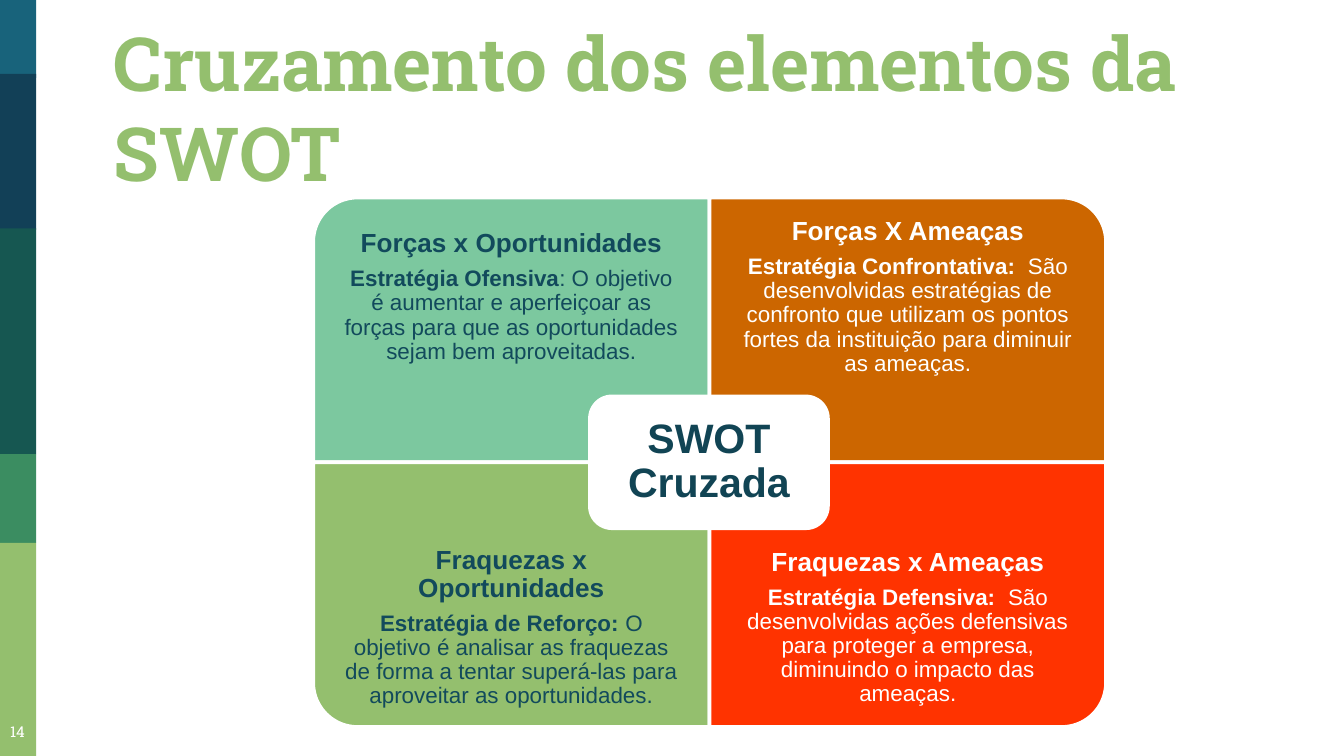
from math import cos, pi, sin

from pptx import Presentation
from pptx.dml.color import RGBColor
from pptx.enum.shapes import MSO_SHAPE as Shape
from pptx.enum.text import MSO_ANCHOR as Anchor, PP_ALIGN as Align
from pptx.util import Inches, Pt

WHITE, GREEN, NAVY = "FFFFFF", "94BF6E", "124A5C"


def color(value):
    return RGBColor.from_string(value)


class SlideBuilder:
    heading_font = "Roboto Slab"
    body_font = "Arial"

    def __init__(self, page):
        self.page = page

    def paint(self, shape, fill, line=None):
        shape.shadow.inherit = False
        shape.fill.solid()
        shape.fill.fore_color.rgb = color(fill)
        if line:
            shape.line.color.rgb = color(line)
            shape.line.width = Pt(2)
        else:
            shape.line.fill.background()
        return shape

    def block(self, kind, left, top, width, height, fill, line=None):
        shape = self.page.shapes.add_shape(
            kind, Inches(left), Inches(top), Inches(width), Inches(height))
        return self.paint(shape, fill, line)

    def frame(self, shape, anchor, left, top, right, bottom):
        frame = shape.text_frame
        frame.word_wrap = True
        frame.vertical_anchor = anchor
        frame.margin_left, frame.margin_top = Inches(left), Inches(top)
        frame.margin_right, frame.margin_bottom = Inches(right), Inches(bottom)
        return frame

    def style(self, span, size, font, ink, bold):
        span.font.size = Pt(size)
        span.font.name = font
        span.font.color.rgb = color(ink)
        span.font.bold = bold

    def label(self, text, left, top, width, height, size, ink, bold, align, anchor):
        box = self.page.shapes.add_textbox(
            Inches(left), Inches(top), Inches(width), Inches(height))
        para = self.frame(box, anchor, 0.1, 0.1, 0.1, 0.1).paragraphs[0]
        para.text = text
        para.alignment = align
        self.style(para.runs[0], size, self.heading_font, ink, bold)

    def body(self, para, size, ink, *parts):
        """Centred paragraph whose first part is bold."""
        para.alignment = Align.CENTER
        para.line_spacing = 0.9
        para.space_after = Pt(0.35 * size)
        for index, text in enumerate(parts):
            span = para.add_run()
            span.text = text
            self.style(span, size, self.body_font, ink, index == 0)

    def quadrant(self, center, side, fill, ink, heading, strategy, detail):
        """Rectangle growing from the centre with its outer corner rounded."""
        width, height, radius = 2.95, 1.97, 0.33
        (x, y), (right, down) = center, side
        outer_x, outer_y = x + right * width, y + down * height
        steps = 24
        arc = [(outer_x - right * radius * (1 - sin(angle)),
                outer_y - down * radius * (1 - cos(angle)))
               for angle in (pi / 2 * step / steps for step in range(steps + 1))]
        points = [(x, outer_y), *arc, (outer_x, y)]
        builder = self.page.shapes.build_freeform(Inches(x), Inches(y))
        builder.add_line_segments([(Inches(a), Inches(b)) for a, b in points])
        shape = self.paint(builder.convert_to_shape(), fill, WHITE)
        top, bottom = (0.22, 0.71) if down < 0 else (0.71, 0.22)
        frame = self.frame(shape, Anchor.MIDDLE, 0.22, top, 0.22, bottom)
        self.body(frame.paragraphs[0], 14, ink, heading)
        self.body(frame.add_paragraph(), 12, ink, strategy, detail)


def main():
    deck = Presentation()
    deck.slide_width = Inches(10)
    deck.slide_height = deck.slide_width * 9 // 16
    slide = SlideBuilder(deck.slides.add_slide(deck.slide_layouts[6]))

    # Side strip
    for top, height, fill in [(0, 0.58, "18637B"), (0.55, 1.16, "124057"),
                              (1.7, 1.68, "165751"), (3.38, 0.66, "3B8D61"),
                              (4.04, 1.59, GREEN)]:
        slide.block(Shape.RECTANGLE, 0, top, 0.27, height, fill)

    # Page number and title
    slide.label("14", -0.06, 5.27, 0.38, 0.35, 8, WHITE, False,
                Align.CENTER, Anchor.MIDDLE)
    slide.label("Cruzamento dos elementos da SWOT", 0.75, 0.29, 8.74, 1.27,
                40, GREEN, True, Align.LEFT, Anchor.BOTTOM)

    # Four crossed strategies
    quadrants = [
        ((-1, -1), "7CC89F", NAVY, "Forças x Oportunidades", "Estratégia Ofensiva",
         ": O objetivo é aumentar e aperfeiçoar as forças para que as "
         "oportunidades sejam bem aproveitadas."),
        ((1, -1), "CC6600", WHITE, "Forças X Ameaças", "Estratégia Confrontativa: ",
         " São desenvolvidas estratégias de confronto que utilizam os pontos "
         "fortes da instituição para diminuir as ameaças."),
        ((-1, 1), GREEN, NAVY, "Fraquezas x Oportunidades", "Estratégia de Reforço: ",
         "O objetivo é analisar as fraquezas de forma a tentar superá-las para "
         "aproveitar as oportunidades."),
        ((1, 1), "FF3300", WHITE, "Fraquezas x Ameaças", "Estratégia Defensiva: ",
         " São desenvolvidas ações defensivas para proteger a empresa, "
         "diminuindo o impacto das ameaças."),
    ]
    for quadrant in quadrants:
        slide.quadrant((5.28, 3.44), *quadrant)

    # Centre plate
    plate = slide.block(Shape.ROUNDED_RECTANGLE, 4.39, 2.95, 1.77, 0.98, WHITE, WHITE)
    frame = slide.frame(plate, Anchor.MIDDLE, 0.09, 0.09, 0.09, 0.09)
    slide.body(frame.paragraphs[0], 22, "114454", "SWOT Cruzada")

    deck.save("out.pptx")


if __name__ == "__main__":
    main()
